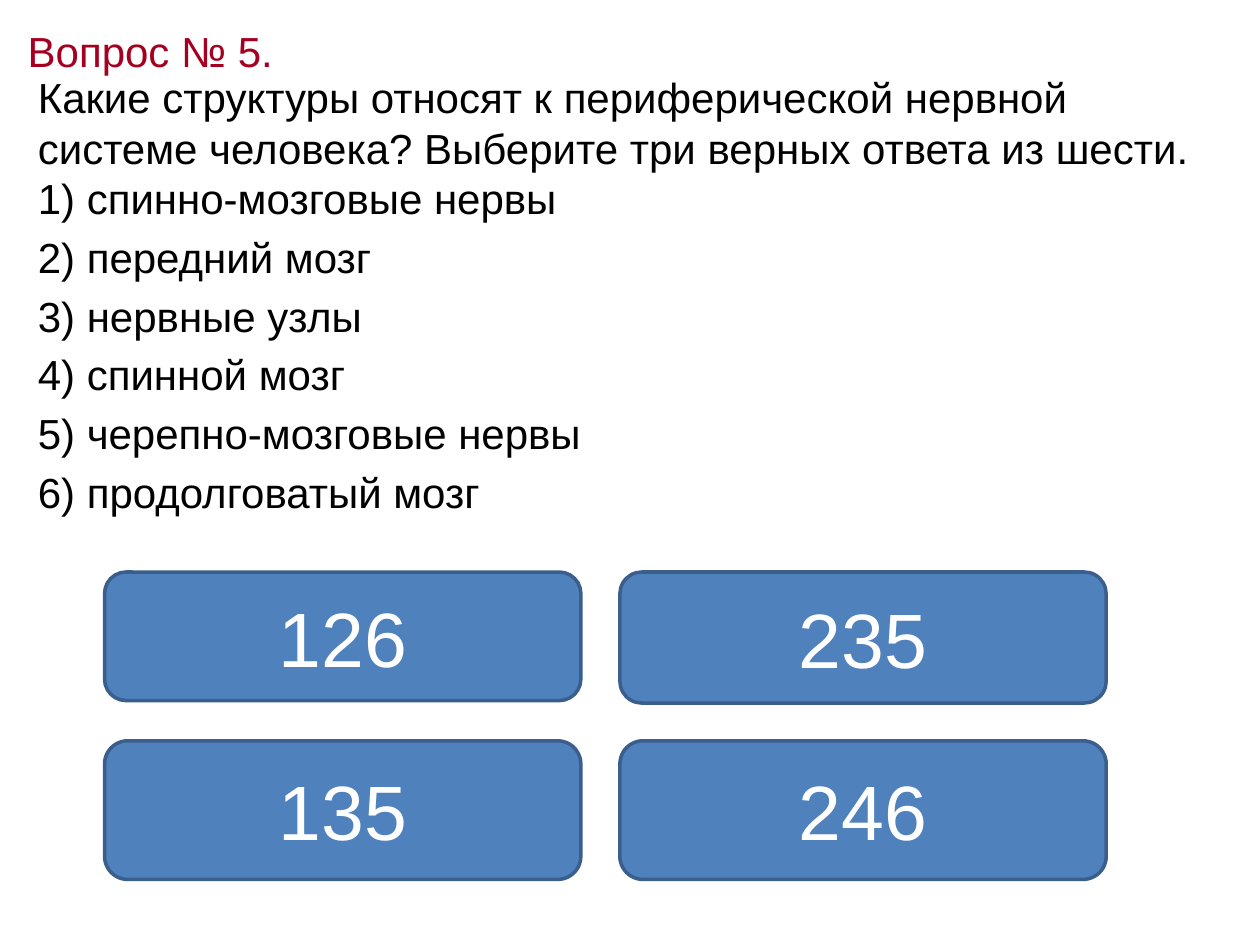
from lxml.etree import SubElement
from pptx import Presentation
from pptx.dml.color import RGBColor
from pptx.enum.shapes import MSO_SHAPE
from pptx.enum.text import MSO_ANCHOR, MSO_AUTO_SIZE, PP_ALIGN
from pptx.oxml.ns import qn
from pptx.util import Inches, Pt

RED = RGBColor(0xA5, 0x00, 0x21)
BLACK = RGBColor(0x00, 0x00, 0x00)
WHITE = RGBColor(0xFF, 0xFF, 0xFF)
BLUE = RGBColor(0x4F, 0x81, 0xBD)
EDGE = RGBColor(0x3A, 0x5F, 0x8C)

LINES = [
    "Какие структуры относят к периферической нервной системе человека? "
    "Выберите три верных ответа из шести. 1) спинно-мозговые нервы",
    "2) передний мозг",
    "3) нервные узлы",
    "4) спинной мозг",
    "5) черепно-мозговые нервы",
    "6) продолговатый мозг",
]
BUTTONS = [
    ("126", 0.83, 4.54, 3.78, 1.02),
    ("235", 4.92, 4.54, 3.86, 1.04),
    ("135", 0.83, 5.88, 3.78, 1.1),
    ("246", 4.92, 5.88, 3.86, 1.1),
]


def place(shape, left, top, width, height):
    shape.left, shape.top = Inches(left), Inches(top)
    shape.width, shape.height = Inches(width), Inches(height)


def style(par, size, color, align):
    par.alignment = align
    par.font.name = "Arial"
    par.font.size = Pt(size)
    par.font.color.rgb = color


deck = Presentation()
deck.slide_width, deck.slide_height = Inches(10), Inches(7.5)
slide = deck.slides.add_slide(deck.slide_layouts[1])

title = slide.shapes.title
place(title, 0.12, 0.13, 9, 0.54)
title.text_frame.text = "Вопрос № 5."
title.text_frame.auto_size = MSO_AUTO_SIZE.NONE
title.text_frame.vertical_anchor = MSO_ANCHOR.MIDDLE
style(title.text_frame.paragraphs[0], 24, RED, PP_ALIGN.LEFT)

body = slide.placeholders[1]
place(body, 0.2, 0.52, 9.45, 4.95)
body.text_frame.text = "\n".join(LINES)
body.text_frame.auto_size = MSO_AUTO_SIZE.NONE
for par in body.text_frame.paragraphs:
    style(par, 24, BLACK, PP_ALIGN.LEFT)
    par.line_spacing = Pt(28.8)
    par.space_before = Pt(4.8)
    props = par._p.get_or_add_pPr()
    props.set("marL", "0")
    props.set("indent", "0")
    SubElement(props, qn("a:buNone"))

for text, *box in BUTTONS:
    button = slide.shapes.add_shape(
        MSO_SHAPE.ROUNDED_RECTANGLE, *[Inches(side) for side in box])
    button.shadow.inherit = False
    button.fill.solid()
    button.fill.fore_color.rgb = BLUE
    button.line.color.rgb = EDGE
    button.line.width = Pt(2)
    button.text_frame.text = text
    button.text_frame.vertical_anchor = MSO_ANCHOR.MIDDLE
    style(button.text_frame.paragraphs[0], 44, WHITE, PP_ALIGN.CENTER)

deck.save("out.pptx")
